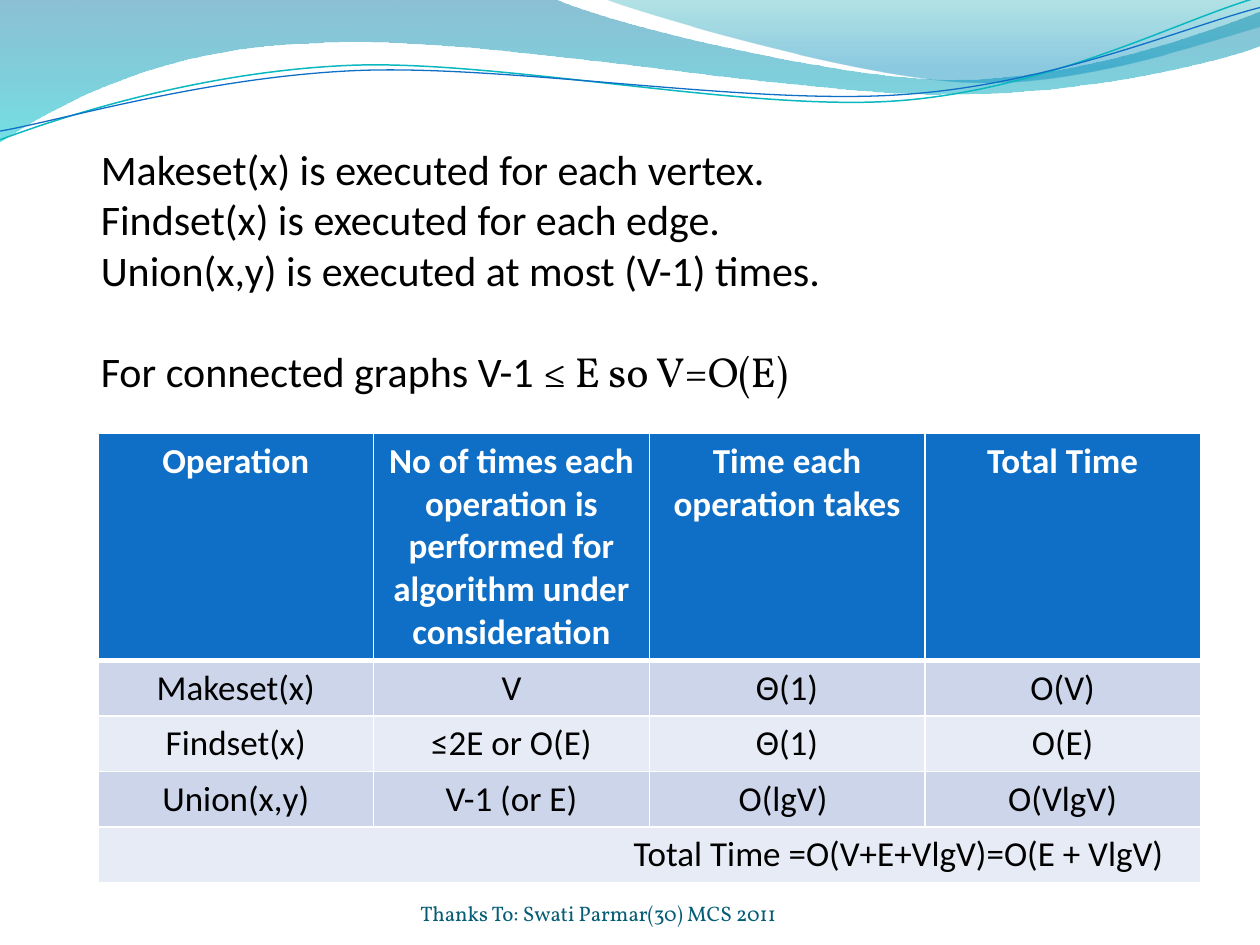
from dataclasses import dataclass

from lxml import etree
from pptx import Presentation
from pptx.dml.color import RGBColor
from pptx.enum.text import MSO_ANCHOR, PP_ALIGN
from pptx.oxml.ns import qn
from pptx.util import Pt

CENTER, RIGHT = PP_ALIGN.CENTER, PP_ALIGN.RIGHT
BOTTOM = MSO_ANCHOR.BOTTOM
BLANK_LAYOUT = 6


@dataclass(frozen=True)
class Theme:
    sans: str = "Calibri"
    serif: str = "Vollkorn"
    body_size: int = 24
    table_size: int = 20
    footer_size: int = 12
    ink: str = "000000"
    white: str = "FFFFFF"
    blue: str = "0F6FC6"
    teal: str = "0AB8BF"
    footer: str = "045D75"
    bands: tuple = ("CCD5EA", "E7EBF5")


THEME = Theme()

# Outlines in points: each step holds one point (a straight line)
# or two control points and an end point (a Bézier curve).
BROAD_WAVE = [
    [(0, 0)], [(316.8, -0.7)],
    [(342.7, 12.2), (478.1, 45.4), (545.8, 45.4)],
    [(614.2, 45.4), (689.8, 18.7), (720, 6.5)],
    [(720.7, 25.9)],
    [(707.8, 31.7), (626.4, 54.7), (537.1, 54)],
    [(447.8, 54), (275, 20.2), (185, 24.5)],
    [(92.2, 25.9), (33.1, 59.8), (-0.7, 81.4)],
]
RIGHT_WAVE = [
    [(344.9, -0.7)],
    [(366.5, 7.9), (491, 44.6), (553.7, 46.8)],
    [(616.3, 49.7), (691.9, 23), (720, 15.1)],
    [(720, 0)],
]
TEAL_LINE = [
    [(0, 79.9)],
    [(34.6, 67), (113.8, 41), (199.4, 37.4)],
    [(284.4, 33.8), (427, 64.1), (513.4, 57.6)],
    [(599.8, 51.1), (675.4, 10.8), (718.6, -1.4)],
]
BLUE_LINE = [
    [(0, 74.9)],
    [(33.8, 69.1), (118.1, 43.9), (203.8, 40.3)],
    [(290.2, 36.7), (429.8, 60.5), (516.2, 54)],
    [(601.9, 48.2), (677.5, 15.1), (720, 4.3)],
]

STATEMENTS = [
    "Makeset(x) is executed for each vertex.",
    "Findset(x) is executed for each edge.",
    "Union(x,y) is executed at most (V-1) times.",
]
COSTS = [
    ["Operation",
     "No of times each operation is performed for algorithm under consideration",
     "Time each operation takes", "Total Time"],
    ["Makeset(x)", "V", "Θ(1)", "O(V)"],
    ["Findset(x)", "≤2E or O(E)", "Θ(1)", "O(E)"],
    ["Union(x,y)", "V-1 (or E)", "O(lgV) ", "O(VlgV)"],
    ["Total Time =O(V+E+VlgV)=O(E + VlgV)"],
]


def color(code):
    return RGBColor.from_string(code)


def add_outline(page, outline, close):
    """Build the outline from its end points, then bend the curved steps."""
    start, *ends = [(Pt(x), Pt(y)) for x, y in (step[-1] for step in outline)]
    builder = page.shapes.build_freeform(*start)
    builder.add_line_segments(ends, close=False)
    if close:
        builder.add_line_segments([], close=True)
    shape = builder.convert_to_shape()
    shape.shadow.inherit = False
    segments = list(shape.element.iter(qn("a:lnTo")))
    for segment, step in zip(segments, outline[1:]):
        if len(step) == 1:
            continue
        curve = etree.Element(qn("a:cubicBezTo"))
        for x, y in step:
            etree.SubElement(curve, qn("a:pt"),
                             x=str(Pt(x) - shape.left), y=str(Pt(y) - shape.top))
        segment.getparent().replace(segment, curve)
    return shape


def add_wave(page, outline, stops):
    """Add a closed wave; stops hold (position, colour, opacity in percent)."""
    wave = add_outline(page, outline, close=True)
    wave.line.fill.background()
    wave.fill.gradient()
    wave.fill.gradient_angle = 270
    for stop, (position, code, opacity) in zip(wave.fill.gradient_stops, stops):
        stop.position = position
        stop.color.rgb = color(code)
    swatches = wave.element.spPr.iter(qn("a:srgbClr"))
    for swatch, (position, code, opacity) in zip(swatches, stops):
        etree.SubElement(swatch, qn("a:alpha"), val=str(opacity * 1000))


def add_curve(page, outline, code, width):
    curve = add_outline(page, outline, close=False)
    curve.fill.background()
    curve.line.color.rgb = color(code)
    curve.line.width = Pt(width)


def format_font(font, name, size, code, bold=False):
    font.name, font.size, font.bold = name, Pt(size), bold
    font.color.rgb = color(code)


def add_statements(page):
    box = page.shapes.add_textbox(Pt(50.5), Pt(78.5), Pt(641.5), Pt(174))
    frame = box.text_frame
    frame.word_wrap = True
    frame.text = "\n".join(STATEMENTS)
    conclusion = frame.add_paragraph()
    conclusion.space_before = Pt(29)
    for text, name in (("For connected graphs V-1 ", THEME.sans),
                       ("≤ E so V=O(E)", THEME.serif)):
        span = conclusion.add_run()
        span.text = text
        span.font.name = name
    for para in frame.paragraphs:
        format_font(para.font, THEME.sans, THEME.body_size, THEME.ink)


def set_borders(cell, top, bottom):
    properties = cell._tc.get_or_add_tcPr()
    widths = {"a:lnL": 1, "a:lnR": 1, "a:lnT": top, "a:lnB": bottom}
    for index, (tag, width) in enumerate(widths.items()):
        line = etree.Element(qn(tag), w=str(Pt(width)))
        fill = etree.SubElement(line, qn("a:solidFill"))
        etree.SubElement(fill, qn("a:srgbClr"), val=THEME.white)
        properties.insert(index, line)


def format_cell(cell, row):
    header = row == 0
    cell.fill.solid()
    cell.fill.fore_color.rgb = color(THEME.blue if header else THEME.bands[(row - 1) % 2])
    set_borders(cell, top=3 if row == 1 else 1, bottom=3 if header else 1)
    para = cell.text_frame.paragraphs[0]
    para.alignment = CENTER
    format_font(para.font, THEME.sans, THEME.table_size,
                THEME.white if header else THEME.ink, bold=header)


def add_cost_table(page):
    rows, columns = len(COSTS), len(COSTS[0])
    table = page.shapes.add_table(
        rows, columns, Pt(56), Pt(247.7), Pt(630), Pt(252)).table
    for index, texts in enumerate(COSTS):
        table.rows[index].height = Pt(31 if index else 128)
        for column, text in enumerate(texts):
            table.cell(index, column).text = text
        for cell in table.rows[index].cells:
            format_cell(cell, index)
    total = table.cell(rows - 1, 0)
    total.merge(table.cell(rows - 1, columns - 1))
    total.margin_right = Pt(21)
    total.text_frame.paragraphs[0].alignment = RIGHT


def add_footer(page):
    box = page.shapes.add_textbox(Pt(210), Pt(500), Pt(264), Pt(29))
    frame = box.text_frame
    frame.word_wrap = True
    frame.vertical_anchor = BOTTOM
    frame.margin_left = frame.margin_right = frame.margin_top = frame.margin_bottom = 0
    frame.text = "Thanks To: Swati Parmar(30) MCS 2011"
    para = frame.paragraphs[0]
    para.alignment = CENTER
    format_font(para.font, THEME.serif, THEME.footer_size, THEME.footer)


def main():
    deck = Presentation()
    deck.slide_width, deck.slide_height = Pt(720), Pt(540)
    page = deck.slides.add_slide(deck.slide_layouts[BLANK_LAYOUT])
    add_wave(page, BROAD_WAVE, [(0, "0074A1", 45), (1, "00C6CF", 55)])
    add_wave(page, RIGHT_WAVE, [(0, "00A1A9", 30), (0.8, "008BBF", 45)])
    add_curve(page, TEAL_LINE, THEME.teal, 0.85)
    add_curve(page, BLUE_LINE, THEME.blue, 0.75)
    add_cost_table(page)
    add_footer(page)
    add_statements(page)
    deck.save("out.pptx")


if __name__ == "__main__":
    main()
